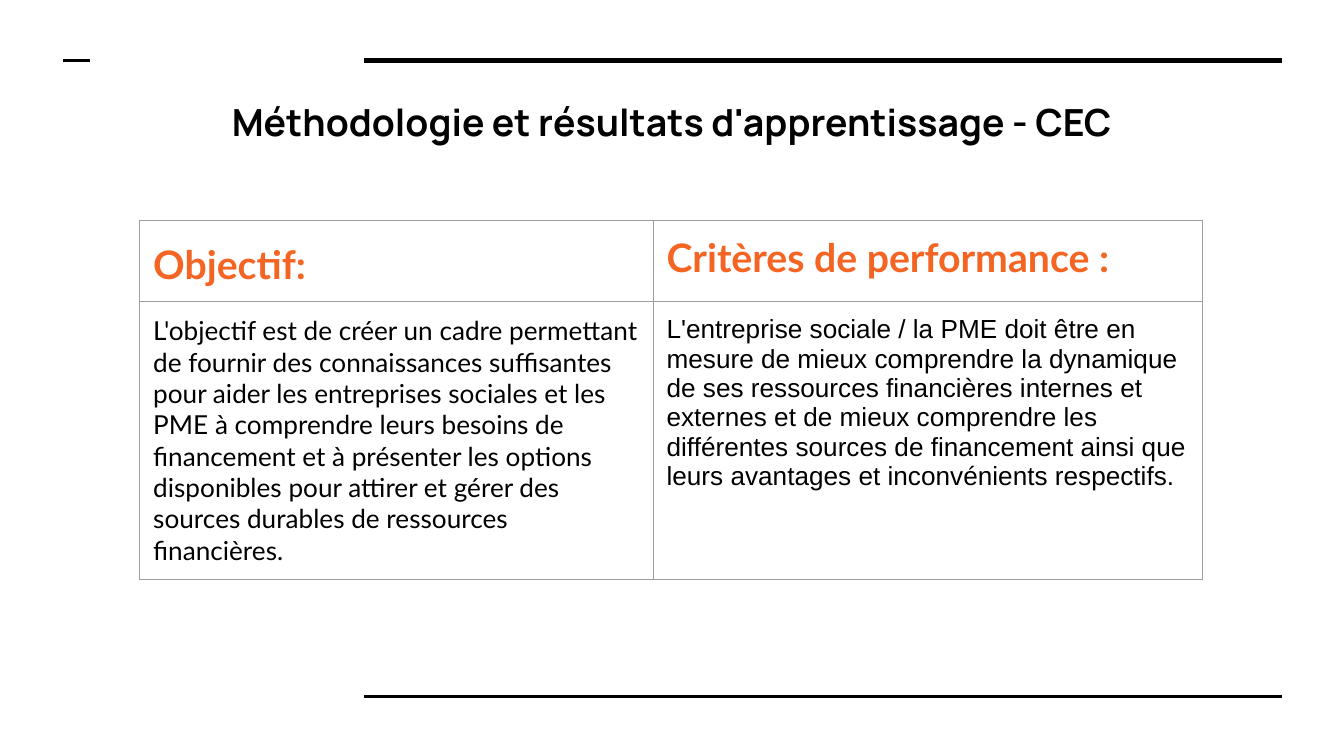
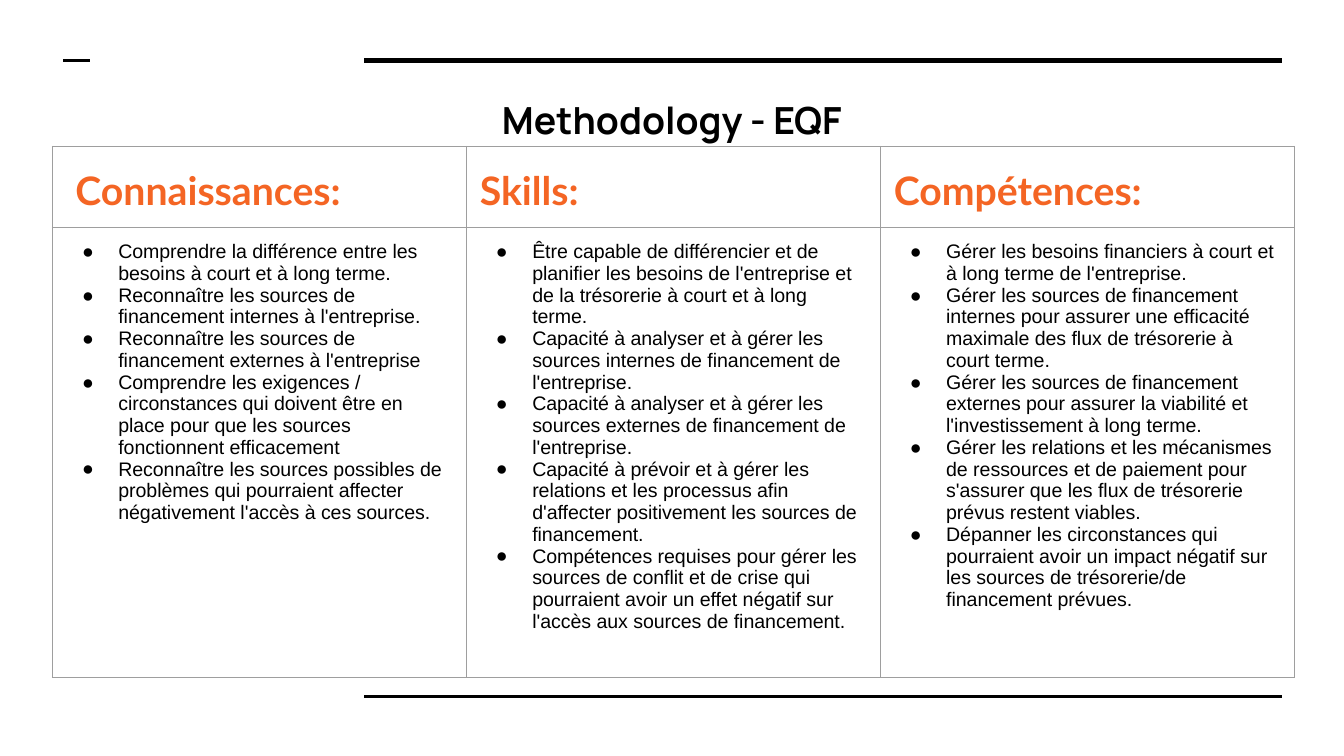
from lxml.etree import SubElement
from pptx import Presentation
from pptx.dml.color import RGBColor
from pptx.enum.shapes import MSO_CONNECTOR
from pptx.enum.text import MSO_ANCHOR, PP_ALIGN
from pptx.oxml.ns import qn
from pptx.util import Inches, Pt

COLORS = {"ink": "000000", "accent": "F46524", "grid": "9E9E9E", "paper": "FFFFFF"}
FONTS = {"title": "Manrope", "head": "Lato", "body": "Arial"}
INSET = Inches(0.1)
SLIDE_WIDTH = 10
SLIDE_HEIGHT = SLIDE_WIDTH * 9 / 16
FRAME_SIDE = Inches(3.28)
TITLE_BOX = (1.41, 0.64, 7.18, 0.69)
RULES = [(2.71, 9.54, 0.45, 3), (2.71, 9.54, 5.18, 1.5), (0.47, 0.67, 0.45, 1.5)]

GOALS = [
    ("Objectif:", 1.15, "Lato",
     "L'objectif est de créer un cadre permettant de fournir des connaissances "
     "suffisantes pour aider les entreprises sociales et les PME à comprendre leurs "
     "besoins de financement et à présenter les options disponibles pour attirer et "
     "gérer des sources durables de ressources financières."),
    ("Critères de performance :", None, "Arial",
     "L'entreprise sociale / la PME doit être en mesure de mieux comprendre la "
     "dynamique de ses ressources financières internes et externes et de mieux "
     "comprendre les différentes sources de financement ainsi que leurs avantages "
     "et inconvénients respectifs."),
]

OUTCOMES = {
    " Connaissances:": [
        "Comprendre la différence entre les besoins à court et à long terme.",
        "Reconnaître les sources de financement internes à l'entreprise.",
        "Reconnaître les sources de financement externes à l'entreprise",
        "Comprendre les exigences / circonstances qui doivent être en place pour que "
        "les sources fonctionnent efficacement",
        "Reconnaître les sources possibles de problèmes qui pourraient affecter "
        "négativement l'accès à ces sources.",
    ],
    "Skills:": [
        "Être capable de différencier et de planifier les besoins de l'entreprise et "
        "de la trésorerie à court et à long terme.",
        "Capacité à analyser et à gérer les sources internes de financement de "
        "l'entreprise.",
        "Capacité à analyser et à gérer les sources externes de financement de "
        "l'entreprise.",
        "Capacité à prévoir et à gérer les relations et les processus afin "
        "d'affecter positivement les sources de financement.",
        "Compétences requises pour gérer les sources de conflit et de crise qui "
        "pourraient avoir un effet négatif sur l'accès aux sources de financement.",
    ],
    "Compétences:": [
        "Gérer les besoins financiers à court et à long terme de l'entreprise.",
        "Gérer les sources de financement internes pour assurer une efficacité "
        "maximale des flux de trésorerie à court terme.",
        "Gérer les sources de financement externes pour assurer la viabilité et "
        "l'investissement à long terme.",
        "Gérer les relations et les mécanismes de ressources et de paiement pour "
        "s'assurer que les flux de trésorerie prévus restent viables.",
        "Dépanner les circonstances qui pourraient avoir un impact négatif sur les "
        "sources de trésorerie/de financement prévues.",
    ],
}


def rgb(name):
    return RGBColor.from_string(COLORS[name])


def add_run(p, text, size, font, color="ink", bold=False):
    r = p.add_run()
    r.text = text
    r.font.size = Pt(size)
    r.font.name = font
    r.font.bold = bold
    r.font.color.rgb = rgb(color)


def set_insets(box):
    box.margin_left = box.margin_right = INSET
    box.margin_top = box.margin_bottom = INSET


def add_solid(parent, color):
    fill = SubElement(parent, qn("a:solidFill"))
    SubElement(fill, qn("a:srgbClr"), val=COLORS[color])


def add_bullet(p):
    pPr = p._p.get_or_add_pPr()
    pPr.set("marL", str(Inches(0.39)))
    pPr.set("indent", str(Inches(-0.27)))
    clr = SubElement(pPr, qn("a:buClr"))
    SubElement(clr, qn("a:srgbClr"), val=COLORS["ink"])
    SubElement(pPr, qn("a:buFont"), typeface=FONTS["body"])
    SubElement(pPr, qn("a:buChar"), char="●")


def add_rule(s, x1, x2, y, weight):
    line = s.shapes.add_connector(
        MSO_CONNECTOR.STRAIGHT, Inches(x1), Inches(y), Inches(x2), Inches(y))
    line.line.color.rgb = rgb("ink")
    line.line.width = Pt(weight)
    SubElement(line._element.spPr, qn("a:effectLst"))


def add_title(s, text, box):
    sp = s.shapes.add_textbox(*map(Inches, box))
    tf = sp.text_frame
    tf.word_wrap = True
    tf.vertical_anchor = MSO_ANCHOR.TOP
    set_insets(tf)
    p = tf.paragraphs[0]
    p.alignment = PP_ALIGN.CENTER
    add_run(p, text, 20, FONTS["title"], bold=True)


def style_cell(cell):
    set_insets(cell)
    tcPr = cell._tc.get_or_add_tcPr()
    for side in ("lnL", "lnR", "lnT", "lnB"):
        add_solid(SubElement(tcPr, qn("a:" + side), w=str(Pt(0.75))), "grid")
    cell.fill.background()


def add_grid(s, left, top, cols, rows):
    frame = s.shapes.add_table(len(rows), len(cols), Inches(left), Inches(top),
                               FRAME_SIDE, FRAME_SIDE)
    table = frame.table
    table.first_row = table.horz_banding = False
    for col, width in zip(table.columns, cols):
        col.width = Inches(width)
    for row, height in zip(table.rows, rows):
        row.height = Inches(height)
    frame.width = frame.height = FRAME_SIDE
    for cell in table.iter_cells():
        style_cell(cell)
    return table


def add_heading(cell, text, spacing=1.15):
    p = cell.text_frame.paragraphs[0]
    if spacing:
        p.line_spacing = spacing
    add_run(p, text, 21, FONTS["head"], "accent", True)


def add_base(prs, title, title_box):
    s = prs.slides.add_slide(prs.slide_layouts[6])
    s.background.fill.solid()
    s.background.fill.fore_color.rgb = rgb("paper")
    for rule in RULES:
        add_rule(s, *rule)
    add_title(s, title, title_box)
    return s


def add_goals_slide(prs):
    s = add_base(prs, "Méthodologie et résultats d'apprentissage - CEC", TITLE_BOX)
    table = add_grid(s, 1.04, 1.64, [3.82, 4.09], [0.6, 1.05])
    for i, (head, spacing, font, body) in enumerate(GOALS):
        add_heading(table.cell(0, i), head, spacing)
        add_run(table.cell(1, i).text_frame.paragraphs[0], body, 14, font)


def add_outcomes_slide(prs):
    left, top, width, height = TITLE_BOX
    s = add_base(prs, "Methodology - EQF", (left, top - 0.02, width, height))
    table = add_grid(s, 0.39, 1.09, [3.08] * len(OUTCOMES), [0.42, 2.82])
    for i, (head, items) in enumerate(OUTCOMES.items()):
        add_heading(table.cell(0, i), head)
        tf = table.cell(1, i).text_frame
        for j, item in enumerate(items):
            p = tf.add_paragraph() if j else tf.paragraphs[0]
            add_bullet(p)
            add_run(p, item, 10.5, FONTS["body"])


def main():
    prs = Presentation()
    prs.slide_width = Inches(SLIDE_WIDTH)
    prs.slide_height = Inches(SLIDE_HEIGHT)
    add_goals_slide(prs)
    add_outcomes_slide(prs)
    prs.save("out.pptx")


if __name__ == "__main__":
    main()
